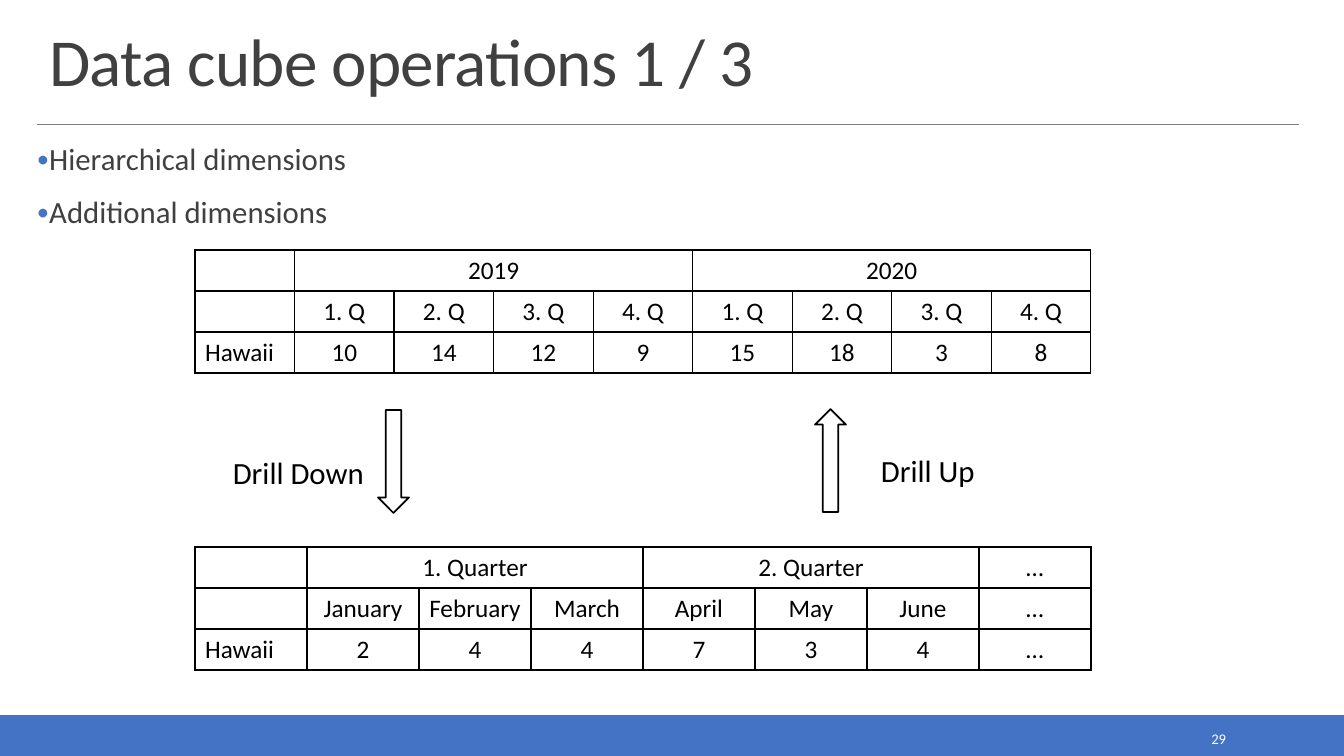
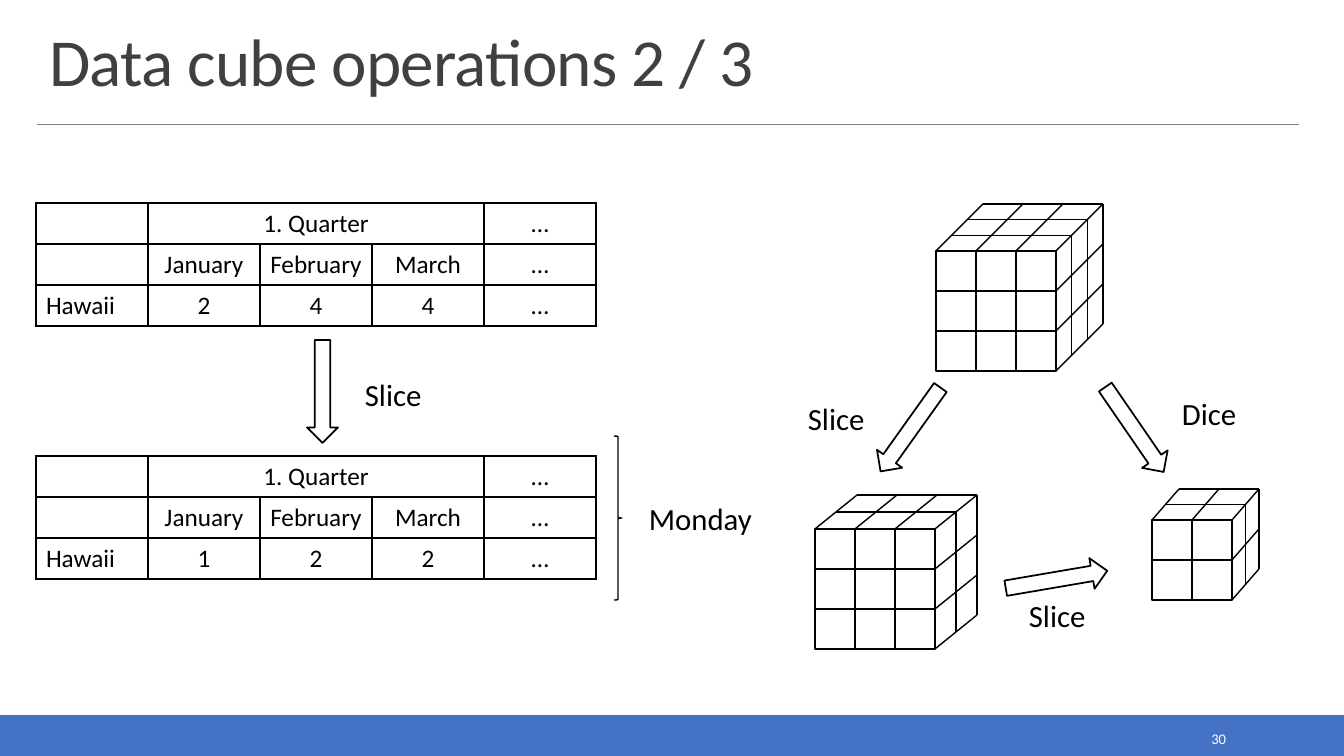
from lxml.etree import SubElement
from pptx import Presentation
from pptx.dml.color import RGBColor
from pptx.enum.shapes import MSO_CONNECTOR, MSO_SHAPE
from pptx.enum.text import MSO_ANCHOR, MSO_AUTO_SIZE, PP_ALIGN
from pptx.oxml.ns import qn
from pptx.util import Emu, Pt

SCALE = 914400 / 100.8
SLIDE_SIZE = (1344, 756)
FONT = "Calibri"
COLORS = {
    "accent": "4472C4",
    "text": "404040",
    "rule": "808080",
    "black": "000000",
    "white": "FFFFFF",
}

TITLE_BOX = (39, 20, 1262, 85)
BODY_BOX = (37, 140, 1262, 94)
BAND_BOX = (0, 716, 1344, 40)
NUMBER_BOX = (1092, 725, 144, 28)
RULE_LINE = (37, 124, 1299, 124)
ROW_HEIGHT = 41
LABEL_HEIGHT = 47
ARROW_SIZE = (31, 103)
CUBE_CELL = 40

QUARTERS = ["1. Q", "2. Q", "3. Q", "4. Q"]
MONTH_HEADER = [("", 1), ("1. Quarter", 3), ("…", 1)]
MONTHS = ["", "January", "February", "March", "…"]

SLIDES = [
    {
        "title": "Data cube operations 1 / 3",
        "number": "29",
        "bullets": ["Hierarchical dimensions", "Additional dimensions"],
        "tables": [
            {
                "box": (195, 250, 896),
                "header": [("", 1), ("2019", 4), ("2020", 4)],
                "rows": [
                    [""] + QUARTERS * 2,
                    ["Hawaii", "10", "14", "12", "9", "15", "18", "3", "8"],
                ],
            },
            {
                "box": (195, 547, 896),
                "header": [("", 1), ("1. Quarter", 3), ("2. Quarter", 3), ("…", 1)],
                "rows": [
                    ["", "January", "February", "March", "April", "May", "June", "…"],
                    ["Hawaii", "2", "4", "4", "7", "3", "4", "…"],
                ],
            },
        ],
        "arrows": [(378, 410, 0), (815, 409, 180)],
        "labels": [("Drill Up", 871, 447, 174), ("Drill Down", 223, 449, 155)],
        "braces": [],
        "cubes": [],
    },
    {
        "title": "Data cube operations 2 / 3",
        "number": "30",
        "bullets": [],
        "tables": [
            {
                "box": (36, 203, 560),
                "header": MONTH_HEADER,
                "rows": [MONTHS, ["Hawaii", "2", "4", "4", "…"]],
            },
            {
                "box": (36, 456, 560),
                "header": MONTH_HEADER,
                "rows": [MONTHS, ["Hawaii", "1", "2", "2", "…"]],
            },
        ],
        "arrows": [(307, 340, 0), (895, 378, 35.5), (1119, 378, 325.5), (1041, 528, 260.3)],
        "labels": [
            ("Slice", 355, 371, 88),
            ("Monday", 639, 495, 129),
            ("Slice", 798, 395, 88),
            ("Dice", 1172, 390, 88),
            ("Slice", 1019, 592, 88),
        ],
        "braces": [(614, 436, 8, 164)],
        "cubes": [
            {"corner": (936, 251), "cells": 3, "layers": 3, "depth": (47, -47)},
            {"corner": (1152, 520), "cells": 2, "layers": 2, "depth": (27, -31)},
            {"corner": (815, 529), "cells": 3, "layers": 2, "depth": (42, -34)},
        ],
    },
]


def px(*lengths):
    return [Emu(round(length * SCALE)) for length in lengths]


def rgb(name):
    return RGBColor.from_string(COLORS[name])


def format_runs(paragraph, size, color):
    for run in paragraph.runs:
        run.font.name = FONT
        run.font.size = Pt(size)
        run.font.color.rgb = rgb(color)


def add_outlined(shapes, preset, box, fill="white", line="black", width=1.25, rotation=0):
    shape = shapes.add_shape(preset, *px(*box))
    shape.shadow.inherit = False
    if fill:
        shape.fill.solid()
        shape.fill.fore_color.rgb = rgb(fill)
    else:
        shape.fill.background()
    shape.line.color.rgb = rgb(line)
    shape.line.width = Pt(width)
    shape.rotation = rotation


def add_line(shapes, ends, color="black", width=1):
    connector = shapes.add_connector(MSO_CONNECTOR.STRAIGHT, *px(*ends))
    connector.line.color.rgb = rgb(color)
    connector.line.width = Pt(width)
    SubElement(connector.element.spPr, qn("a:effectLst"))


def add_label(slide, text, box, size=22, color="black"):
    text_frame = slide.shapes.add_textbox(*px(*box)).text_frame
    text_frame.word_wrap = True
    text_frame.text = text
    format_runs(text_frame.paragraphs[0], size, color)
    return text_frame


def fill_placeholder(placeholder, box, lines):
    placeholder.left, placeholder.top, placeholder.width, placeholder.height = px(*box)
    text_frame = placeholder.text_frame
    text_frame.text = "\n".join(lines)
    text_frame.auto_size = MSO_AUTO_SIZE.NONE
    return text_frame


def add_frame(slide, title, number):
    add_outlined(slide.shapes, MSO_SHAPE.RECTANGLE, BAND_BOX, "accent", "accent")
    add_line(slide.shapes, RULE_LINE, "rule", 0.5)
    text_frame = fill_placeholder(slide.shapes.title, TITLE_BOX, [title])
    text_frame.vertical_anchor = MSO_ANCHOR.BOTTOM
    paragraph = text_frame.paragraphs[0]
    paragraph.alignment = PP_ALIGN.LEFT
    paragraph.line_spacing = 0.85
    format_runs(paragraph, 48, "text")
    paragraph.runs[0].font.element.set("spc", "-50") if hasattr(
        paragraph.runs[0].font, "element"
    ) else paragraph.runs[0]._r.get_or_add_rPr().set("spc", "-50")
    number_frame = add_label(slide, number, NUMBER_BOX, 10.5, "white")
    number_frame.vertical_anchor = MSO_ANCHOR.MIDDLE
    number_frame.paragraphs[0].alignment = PP_ALIGN.RIGHT


def add_bullets(slide, bullets):
    text_frame = fill_placeholder(slide.placeholders[1], BODY_BOX, bullets)
    text_frame.margin_left = text_frame.margin_right = 0
    text_frame.margin_top, text_frame.margin_bottom = px(4, 4)
    for index, paragraph in enumerate(text_frame.paragraphs):
        properties = paragraph._p.get_or_add_pPr()
        properties.set("marL", "91440")
        properties.set("indent", "-91440")
        bullet_color = SubElement(properties, qn("a:buClr"))
        SubElement(bullet_color, qn("a:srgbClr"), val=COLORS["accent"])
        SubElement(properties, qn("a:buSzPct"), val="80000")
        SubElement(properties, qn("a:buFont"), typeface=FONT)
        SubElement(properties, qn("a:buChar"), char="•")
        paragraph.line_spacing = 0.9
        paragraph.space_before = Pt(12 if index else 0)
        paragraph.space_after = Pt(2)
        format_runs(paragraph, 22, "text")


def format_cell(cell, centered):
    properties = cell._tc.get_or_add_tcPr()
    for side in ("a:lnL", "a:lnR", "a:lnT", "a:lnB"):
        border = SubElement(properties, qn(side), w=str(Pt(1)))
        border_fill = SubElement(border, qn("a:solidFill"))
        SubElement(border_fill, qn("a:srgbClr"), val=COLORS["black"])
    cell.fill.background()
    paragraph = cell.text_frame.paragraphs[0]
    paragraph.alignment = PP_ALIGN.CENTER if centered else PP_ALIGN.LEFT
    format_runs(paragraph, 18, "black")


def add_data_table(slide, box, header, rows):
    left, top, width = box
    row_count, column_count = len(rows) + 1, len(rows[0])
    frame = slide.shapes.add_table(
        row_count, column_count, *px(left, top, width, row_count * ROW_HEIGHT)
    )
    table = frame.table
    table.first_row = table.horz_banding = False
    for column in table.columns:
        column.width = px(width / column_count)[0]
    for row in table.rows:
        row.height = px(ROW_HEIGHT)[0]
    start = 0
    for text, span in header:
        cell = table.cell(0, start)
        cell.text = text
        if span > 1:
            cell.merge(table.cell(0, start + span - 1))
        start += span
    for row_index, values in enumerate(rows, 1):
        for column_index, value in enumerate(values):
            table.cell(row_index, column_index).text = value
    for row in table.rows:
        for column_index, cell in enumerate(row.cells):
            format_cell(cell, column_index > 0)


def add_cube(slide, corner, cells, layers, depth):
    shapes = slide.shapes.add_group_shape().shapes
    left, top = corner
    depth_x, depth_y = depth
    side = cells * CUBE_CELL
    right = left + side
    for row in range(cells):
        for column in range(cells):
            cell_left, cell_top = left + column * CUBE_CELL, top + row * CUBE_CELL
            add_outlined(
                shapes, MSO_SHAPE.RECTANGLE, (cell_left, cell_top, CUBE_CELL, CUBE_CELL)
            )
    steps = [step * CUBE_CELL for step in range(cells + 1)]
    edge_points = [(left + step, top) for step in steps]
    edge_points += [(right, top + step) for step in steps[1:]]
    for x, y in edge_points:
        add_line(shapes, (x, y, x + depth_x, y + depth_y))
    for layer in range(1, layers + 1):
        shift_x, shift_y = depth_x * layer / layers, depth_y * layer / layers
        x, y = right + shift_x, top + shift_y
        add_line(shapes, (left + shift_x, y, x, y))
        add_line(shapes, (x, y, x, y + side))


def build_slide(presentation, content):
    layout = presentation.slide_layouts[1 if content["bullets"] else 5]
    slide = presentation.slides.add_slide(layout)
    add_frame(slide, content["title"], content["number"])
    if content["bullets"]:
        add_bullets(slide, content["bullets"])
    for table in content["tables"]:
        add_data_table(slide, **table)
    for left, top, rotation in content["arrows"]:
        box = (left, top, *ARROW_SIZE)
        add_outlined(slide.shapes, MSO_SHAPE.DOWN_ARROW, box, rotation=rotation)
    for box in content["braces"]:
        add_outlined(slide.shapes, MSO_SHAPE.RIGHT_BRACE, box, fill=None, width=1)
    for cube in content["cubes"]:
        add_cube(slide, **cube)
    for text, left, top, width in content["labels"]:
        add_label(slide, text, (left, top, width, LABEL_HEIGHT))


def main():
    presentation = Presentation()
    presentation.slide_width, presentation.slide_height = px(*SLIDE_SIZE)
    for content in SLIDES:
        build_slide(presentation, content)
    presentation.save("out.pptx")


if __name__ == "__main__":
    main()
